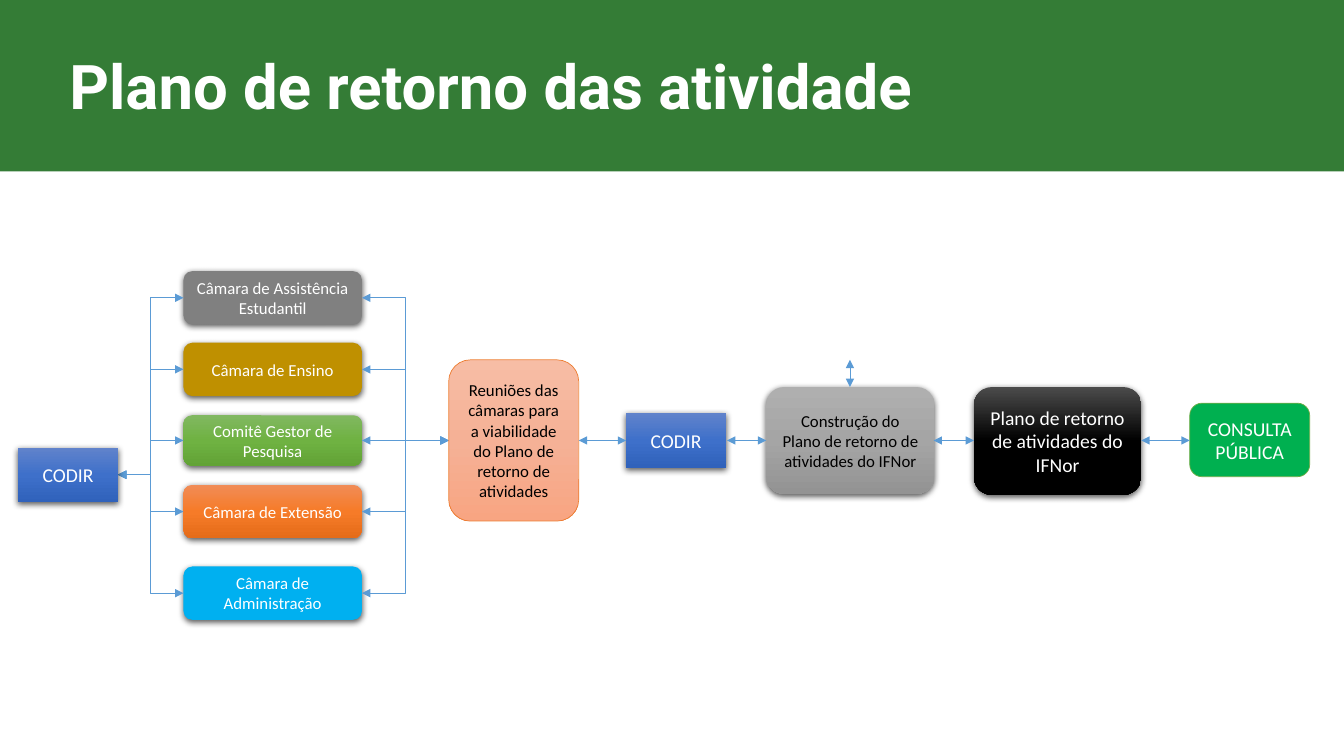
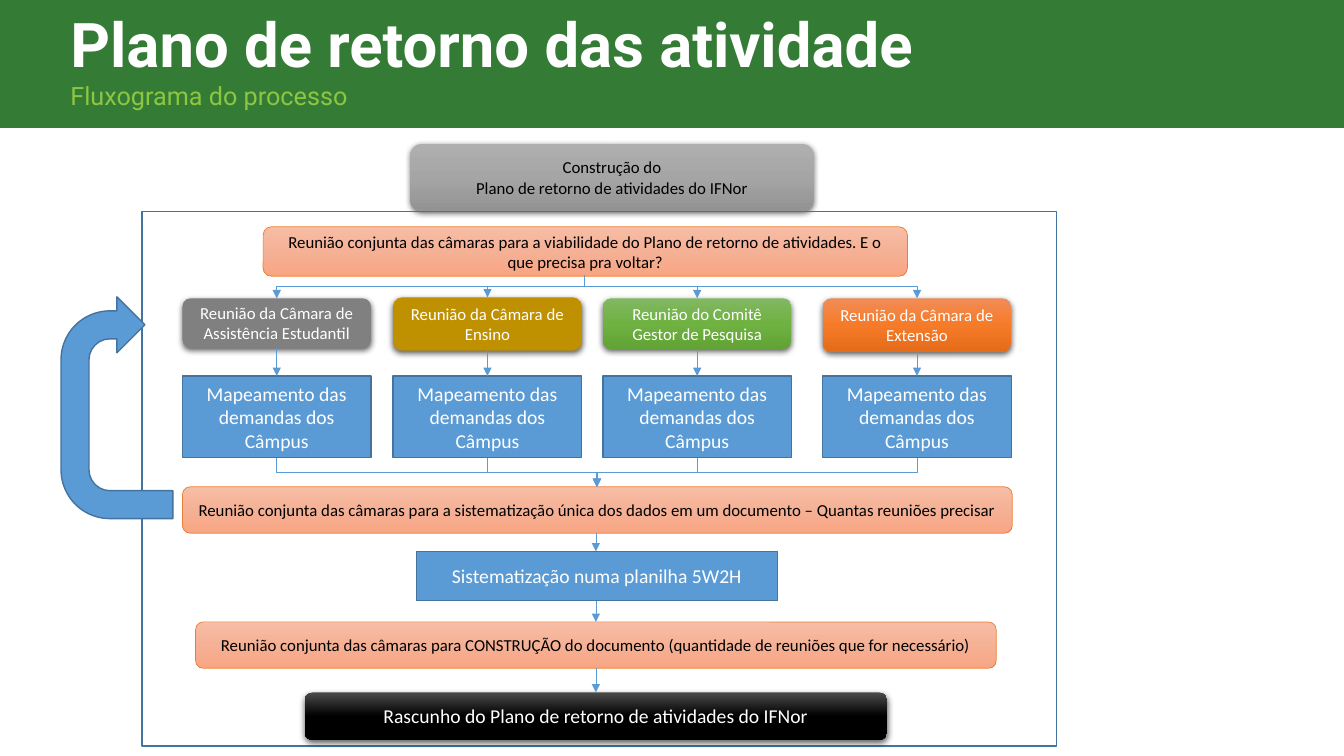
from copy import deepcopy
from lxml.etree import SubElement
from pptx import Presentation
from pptx.dml.color import RGBColor
from pptx.enum.shapes import MSO_CONNECTOR, MSO_SHAPE
from pptx.enum.text import MSO_ANCHOR, PP_ALIGN
from pptx.oxml.ns import qn
from pptx.util import Inches, Pt

GREEN_BAND = "347C36"
WHITE = "FFFFFF"
BLACK = "000000"
SKY = "5B9BD5"
STEEL = "43739E"
GRAY = ["808080"]
GOLD = ["BF9000"]
CYAN = ["00B0F0"]
ORANGE = ["F18C57", "F67B28", "E56C19"]
GREEN = ["81B861", "6FB242", "62A336"]
BLUE = ["6183CB", "3E70CA", "3062BB"]
PEACH = ["F7BDA5", "F5B196", "F8A582"]
SILVER = ["AFAFAF", "A5A5A5", "939393"]
NIGHT = ["4B4B4B", "000000", "000000"]
ROUNDED = MSO_SHAPE.ROUNDED_RECTANGLE
RECTANGLE = MSO_SHAPE.RECTANGLE


def add_box(slide, kind, place, colors, text="", size=12, ink=WHITE, line=None, line_width=0.5, shadow=False):
    shape = slide.shapes.add_shape(kind, *[Inches(value) for value in place])
    shape.shadow.inherit = False
    properties = shape._element.spPr
    if len(colors) == 0:
        shape.fill.background()
    elif len(colors) == 1:
        shape.fill.solid()
        shape.fill.fore_color.rgb = RGBColor.from_string(colors[0])
    else:
        shape.fill.gradient()
        shape.fill.gradient_angle = 270
        stops = properties.find(qn("a:gradFill")).find(qn("a:gsLst"))
        stops.append(deepcopy(stops[0]))
        for index, stop in enumerate(shape.fill.gradient_stops):
            stop.position = index / 2
            stop.color.rgb = RGBColor.from_string(colors[index])
    if line:
        shape.line.color.rgb = RGBColor.from_string(line)
        shape.line.width = Pt(line_width)
    else:
        shape.line.fill.background()
    if shadow:
        outer = SubElement(properties.find(qn("a:effectLst")), qn("a:outerShdw"),
                           blurRad="57150", dist="19050", dir="5400000", algn="ctr", rotWithShape="0")
        shade = SubElement(outer, qn("a:srgbClr"), val=BLACK)
        SubElement(shade, qn("a:alpha"), val="63000")
    if text:
        shape.text_frame.word_wrap = True
        shape.text_frame.vertical_anchor = MSO_ANCHOR.MIDDLE
        shape.text_frame.text = text
        for paragraph in shape.text_frame.paragraphs:
            paragraph.alignment = PP_ALIGN.CENTER
            paragraph.font.name = "Calibri"
            paragraph.font.size = Pt(size)
            paragraph.font.color.rgb = RGBColor.from_string(ink)
    return shape


def add_arrow(slide, x1, y1, x2, y2, both=False, downward=False):
    kind = MSO_CONNECTOR.STRAIGHT if x1 == x2 or y1 == y2 else MSO_CONNECTOR.ELBOW
    turned = downward and kind == MSO_CONNECTOR.ELBOW
    rightward = x2 > x1
    if turned:
        center_x, center_y = (x1 + x2) / 2, (y1 + y2) / 2
        half_width, half_height = (y2 - y1) / 2, abs(x2 - x1) / 2
        if rightward:
            half_width = -half_width
        x1, x2 = center_x - half_width, center_x + half_width
        y1, y2 = center_y - half_height, center_y + half_height
    connector = slide.shapes.add_connector(kind, Inches(x1), Inches(y1), Inches(x2), Inches(y2))
    properties = connector._element.spPr
    if turned:
        properties.find(qn("a:xfrm")).set("rot", "16200000" if rightward else "5400000")
    connector.line.color.rgb = RGBColor.from_string(SKY)
    connector.line.width = Pt(0.5)
    outline = properties.find(qn("a:ln"))
    if both:
        SubElement(outline, qn("a:headEnd"), type="triangle")
    SubElement(outline, qn("a:tailEnd"), type="triangle")
    SubElement(properties, qn("a:effectLst"))


presentation = Presentation()
presentation.slide_width = Inches(13.33)
presentation.slide_height = Inches(7.5)

title = ("Plano de retorno das atividade", 44, WHITE, True)
subtitle = ("Fluxograma do processo", 18, "8DC641", False)
headers = [(1.7, 0.59, 0.43, 0.84, [title]), (1.27, 0.6, 0.01, 1.14, [title, subtitle])]
slides = []
for band_height, left, top, height, lines in headers:
    slide = presentation.slides.add_slide(presentation.slide_layouts[6])
    slides.append(slide)
    add_box(slide, RECTANGLE, (0, 0, 13.33, band_height), [GREEN_BAND])
    heading = slide.shapes.add_textbox(Inches(left), Inches(top), Inches(10.99), Inches(height))
    heading.text_frame.word_wrap = True
    heading.text_frame.text = "\n".join(line[0] for line in lines)
    for paragraph, (_, size, color, bold) in zip(heading.text_frame.paragraphs, lines):
        paragraph.font.name = "Roboto"
        paragraph.font.size = Pt(size)
        paragraph.font.bold = bold
        paragraph.font.color.rgb = RGBColor.from_string(color)

overview, process = slides
plan = "Plano de retorno de atividades do IFNor"
construction = "Construção do\n" + plan

middle = 4.37
chambers = [
    ("Câmara de Assistência Estudantil", 2.69, 0.53, GRAY),
    ("Câmara de Ensino", 3.4, 0.53, GOLD),
    ("Comitê Gestor de Pesquisa", 4.12, 0.5, GREEN),
    ("Câmara de Extensão", 4.81, 0.53, ORANGE),
    ("Câmara de Administração", 5.62, 0.53, CYAN),
]
for name, top, height, colors in chambers:
    add_box(overview, ROUNDED, (1.82, top, 1.77, height), colors, name, shadow=True)
    center = middle if colors == GREEN else top + height / 2
    add_arrow(overview, 1.17, 4.71, 1.82, center, both=True)
    add_arrow(overview, 3.59, center, 4.45, middle, both=True)

for left, top in [(0.18, 4.44), (6.21, 4.1)]:
    add_box(overview, RECTANGLE, (left, top, 0.99, 0.54), BLUE, "CODIR", 14, shadow=True)
add_box(overview, ROUNDED, (4.45, 3.57, 1.29, 1.6), PEACH,
        "Reuniões das câmaras para a viabilidade do Plano de retorno de atividades",
        ink=BLACK, line="ED7D31")
add_box(overview, ROUNDED, (7.6, 3.84, 1.67, 1.06), SILVER, construction, ink=BLACK, shadow=True)
add_box(overview, ROUNDED, (9.66, 3.84, 1.66, 1.07), NIGHT, plan, 14, shadow=True)
add_box(overview, ROUNDED, (11.8, 4, 1.19, 0.73), ["00B050"], "CONSULTA PÚBLICA", 14, line="70AD47")
for start, end in [(5.74, 6.21), (7.21, 7.6), (9.26, 9.66), (11.32, 11.8)]:
    add_arrow(overview, start, middle, end, middle, both=True)
add_arrow(overview, 8.43, 3.57, 8.43, 3.84, both=True)

add_box(process, ROUNDED, (4.07, 1.43, 4, 0.66), SILVER, construction, ink=BLACK, shadow=True)
joint_meetings = [
    ("Reunião conjunta das câmaras para a viabilidade do Plano de retorno de atividades. "
     "E o que precisa pra voltar?", (2.61, 2.25, 6.39, 0.49)),
    ("Reunião conjunta das câmaras para a sistematização única dos dados em um documento "
     "– Quantas reuniões precisar", (1.81, 4.83, 8.23, 0.46)),
    ("Reunião conjunta das câmaras para CONSTRUÇÃO do documento "
     "(quantidade de reuniões que for necessário)", (1.94, 6.17, 7.94, 0.46)),
]
for text, place in joint_meetings:
    add_box(process, ROUNDED, place, PEACH, text, ink=BLACK, line="ED7D31")

column_width = 1.87
chamber_meetings = [
    ("Reunião da Câmara de Assistência Estudantil", 1.81, 2.96, 0.49, GRAY),
    ("Reunião da Câmara de Ensino", 3.9, 2.95, 0.53, GOLD),
    ("Reunião do Comitê Gestor de Pesquisa", 5.98, 2.96, 0.5, GREEN),
    ("Reunião da Câmara de Extensão", 8.16, 2.96, 0.53, ORANGE),
]
for name, left, top, height, colors in chamber_meetings:
    center = left + column_width / 2
    add_box(process, ROUNDED, (left, top, column_width, height), colors, name, shadow=True)
    add_box(process, RECTANGLE, (left, 3.73, column_width, 0.81), [SKY],
            "Mapeamento das demandas dos Câmpus", 14, line=STEEL, line_width=1)
    add_arrow(process, 5.8, 2.73, center, top, downward=True)
    add_arrow(process, center, top + height, center, 3.73)
    add_arrow(process, center, 4.54, 5.92, 4.83, downward=True)

add_box(process, RECTANGLE, (1.41, 2.1, 9.07, 5.3), [], line=STEEL, line_width=1)
add_box(process, RECTANGLE, (4.13, 5.47, 3.58, 0.49), [SKY],
        "Sistematização numa planilha 5W2H", 14, line=STEEL, line_width=1)
add_box(process, ROUNDED, (3.02, 6.87, 5.78, 0.47), NIGHT, "Rascunho do " + plan, 14, shadow=True)
for start, end in [(5.29, 5.47), (5.96, 6.17), (6.63, 6.87)]:
    add_arrow(process, 5.91, start, 5.91, end)
return_arrow = add_box(process, MSO_SHAPE.U_TURN_ARROW, (0.06, 3.49, 2.2, 1.11), [SKY],
                       line=STEEL, line_width=1)
return_arrow.rotation = 270

presentation.save("out.pptx")
